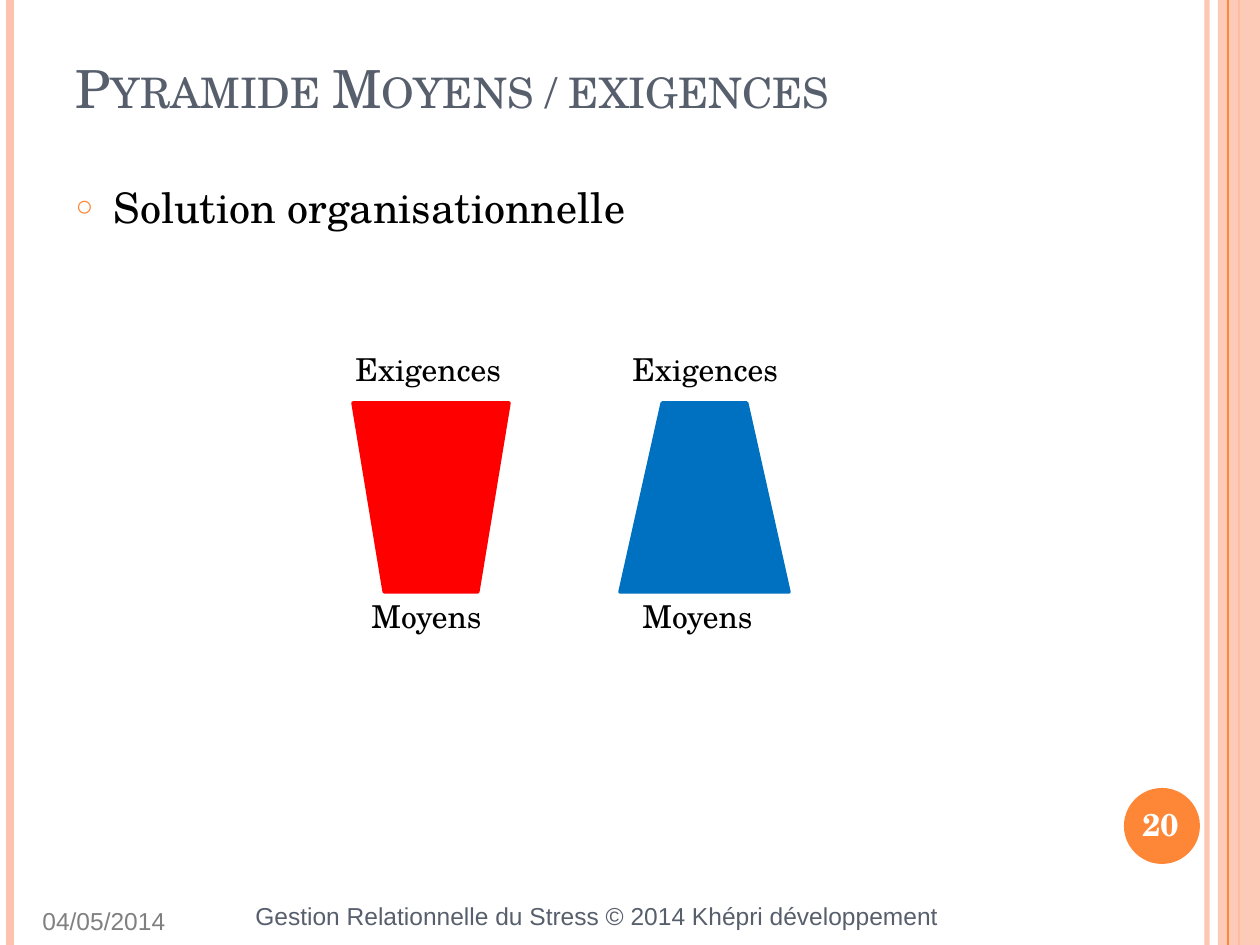
from dataclasses import dataclass

from lxml.etree import SubElement
from pptx import Presentation
from pptx.dml.color import RGBColor
from pptx.enum.shapes import MSO_CONNECTOR, MSO_SHAPE
from pptx.enum.text import MSO_ANCHOR, MSO_AUTO_SIZE, PP_ALIGN
from pptx.oxml.ns import qn
from pptx.util import Emu, Pt


@dataclass(frozen=True)
class Theme:
    serif: str = "TeX Gyre Schola"
    sans: str = "Arial"
    orange: str = "FE8637"
    peach: str = "FEC3AE"
    slate: str = "575F6D"
    grey: str = "808080"
    black: str = "000000"
    white: str = "FFFFFF"
    red: str = "FF0000"
    blue: str = "0070C0"
    title_size: int = 30
    body_size: int = 24
    label_size: int = 18
    footer_size: int = 14


THEME = Theme()
PX_PER_INCH = 126
SLIDE_WIDTH, SLIDE_HEIGHT = 1260, 945

TITLE = "Pyramide Moyens / exigences"
BULLETS = ["Solution organisationnelle"]
PYRAMIDS = [
    (MSO_SHAPE.FLOWCHART_MANUAL_OPERATION, THEME.red, 353, 156,
     [("Exigences", 343), ("Moyens", 359)]),
    (MSO_SHAPE.TRAPEZOID, THEME.blue, 620, 169,
     [("Exigences", 620), ("Moyens", 630)]),
]
PYRAMID_TOP, PYRAMID_HEIGHT = 403, 189
LABEL_TOPS = (344, 591)
LABEL_WIDTHS = {"Exigences": 173, "Moyens": 137}
LABEL_HEIGHT = 50

RULES_BEHIND_BAND = [
    (1207, THEME.peach, 3, 93),
    (10, THEME.peach, 4.5, 100),
    (1239, THEME.orange, 1.5, 100),
]
RULE_ON_BAND = (1228, THEME.orange, 0.75, 100)
BAND = (1218, 0, 42, SLIDE_HEIGHT)
BADGE = (1124, 788, 76, 76)
FOOTER = [
    ("04/05/2014", (30, 900, 193, 45), THEME.sans, THEME.footer_size,
     THEME.grey, False, PP_ALIGN.LEFT),
    ("Gestion Relationnelle du Stress © 2014 Khépri développement",
     (223, 895, 728, 50), THEME.sans, THEME.footer_size,
     THEME.slate, False, PP_ALIGN.RIGHT),
    ("20", (1116, 799, 89, 50), THEME.serif, THEME.label_size,
     THEME.white, True, PP_ALIGN.CENTER),
]


def px(length):
    return Emu(round(length * 914400 / PX_PER_INCH))


def place(part, box):
    part.left, part.top, part.width, part.height = map(px, box)


def set_alpha(fill, percent):
    if percent < 100:
        color = fill._xPr.find(qn("a:solidFill"))[0]
        SubElement(color, qn("a:alpha"), val=str(percent * 1000))


def style(paragraph, face, size, color, bold=False, align=PP_ALIGN.LEFT):
    paragraph.alignment = align
    font = paragraph.font
    font.name, font.size, font.bold = face, Pt(size), bold
    font.color.rgb = RGBColor.from_string(color)


def add_rule(slide, x, color, weight, opacity):
    rule = slide.shapes.add_connector(
        MSO_CONNECTOR.STRAIGHT, px(x), 0, px(x), px(SLIDE_HEIGHT))
    rule.line.width = Pt(weight)
    rule.line.color.rgb = RGBColor.from_string(color)
    set_alpha(rule.line.fill, opacity)
    SubElement(rule._element.spPr, qn("a:effectLst"))


def add_solid(slide, preset, box, color, outline=0, opacity=100):
    solid = slide.shapes.add_shape(preset, *map(px, box))
    solid.shadow.inherit = False
    solid.fill.solid()
    solid.fill.fore_color.rgb = RGBColor.from_string(color)
    set_alpha(solid.fill, opacity)
    if outline:
        solid.line.width = Pt(outline)
        solid.line.color.rgb = RGBColor.from_string(color)
    else:
        solid.line.fill.background()


def add_text(slide, wording, box, *look, wrap=True):
    frame = slide.shapes.add_textbox(*map(px, box)).text_frame
    frame.word_wrap = wrap
    frame.text = wording
    style(frame.paragraphs[0], *look)


def fill_title(title):
    place(title, (63, 38, 1029, 87))
    frame = title.text_frame
    frame.text = TITLE
    frame.auto_size = MSO_AUTO_SIZE.NONE
    frame.vertical_anchor = MSO_ANCHOR.BOTTOM
    heading = frame.paragraphs[0]
    style(heading, THEME.serif, THEME.title_size, THEME.slate)
    heading._p.pPr.find(qn("a:defRPr")).set("cap", "small")


def fill_body(body):
    place(body, (63, 175, 1029, 717))
    frame = body.text_frame
    frame.text = "\n".join(BULLETS)
    frame.auto_size = MSO_AUTO_SIZE.NONE
    for index, bullet in enumerate(frame.paragraphs):
        bullet.space_before = Pt(6 if index else 0)
        properties = bullet._p.get_or_add_pPr()
        properties.set("marL", str(px(38)))
        properties.set("indent", str(px(-38)))
        bullet_color = SubElement(properties, qn("a:buClr"))
        SubElement(bullet_color, qn("a:srgbClr"), val=THEME.orange)
        SubElement(properties, qn("a:buSzPct"), val="70000")
        SubElement(properties, qn("a:buChar"), char="○")
        style(bullet, THEME.serif, THEME.body_size, THEME.black)


def main():
    deck = Presentation()
    deck.slide_width, deck.slide_height = px(SLIDE_WIDTH), px(SLIDE_HEIGHT)
    slide = deck.slides.add_slide(deck.slide_layouts[1])

    for rule in RULES_BEHIND_BAND:
        add_rule(slide, *rule)
    add_solid(slide, MSO_SHAPE.RECTANGLE, BAND, THEME.peach, opacity=87)
    add_rule(slide, *RULE_ON_BAND)
    add_solid(slide, MSO_SHAPE.OVAL, BADGE, THEME.orange)
    for wording, box, *look in FOOTER:
        add_text(slide, wording, box, *look)

    fill_title(slide.shapes.title)
    fill_body(slide.placeholders[1])

    for preset, color, left, width, labels in PYRAMIDS:
        add_solid(slide, preset, (left, PYRAMID_TOP, width, PYRAMID_HEIGHT),
                  color, outline=2)
        for (label, label_left), top in zip(labels, LABEL_TOPS):
            add_text(slide, label,
                     (label_left, top, LABEL_WIDTHS[label], LABEL_HEIGHT),
                     THEME.serif, THEME.label_size, THEME.black, wrap=False)

    deck.save("out.pptx")


if __name__ == "__main__":
    main()
